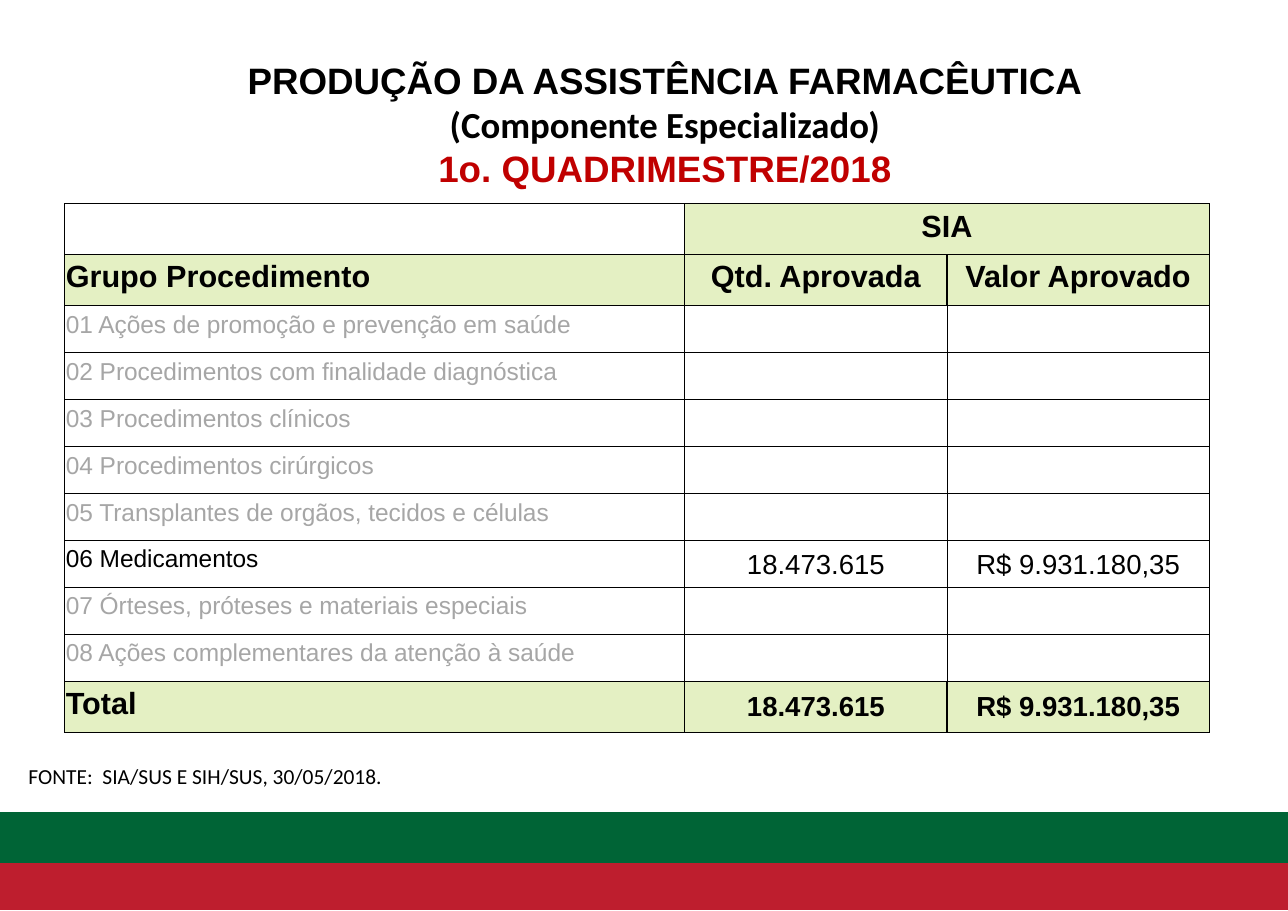
import pptx
import pptx.util
import pptx.dml.color
import pptx.enum.shapes
import pptx.enum.text
import pptx.oxml.ns
import lxml.etree

Pt = pptx.util.Pt
ALIGN = pptx.enum.text.PP_ALIGN
ANCHOR = pptx.enum.text.MSO_ANCHOR

SLIDE_WIDTH, SLIDE_HEIGHT = 841.68, 595.44
COLORS = {"text": "000000", "muted": "A6A6A6", "period": "C00000",
          "header": "E4F0C3", "green": "006436", "red": "BE1E2E"}
THIN, THICK = 0.5, 0.96

HEADINGS = [["", "SIA", ""],
            ["Grupo Procedimento", "Qtd. Aprovada", "Valor Aprovado"]]
GROUPS = ["01 Ações de promoção e prevenção em saúde",
          "02 Procedimentos com finalidade diagnóstica",
          "03 Procedimentos clínicos",
          "04 Procedimentos cirúrgicos",
          "05 Transplantes de orgãos, tecidos e células",
          "06 Medicamentos",
          "07 Órteses, próteses e materiais especiais",
          "08 Ações complementares da atenção à saúde"]
MEDICINES = "06 Medicamentos"
AMOUNTS = ["18.473.615", "R$ 9.931.180,35"]


def rgb(name):
    return pptx.dml.color.RGBColor.from_string(COLORS[name])


def set_margins(target, left, top, right, bottom):
    target.margin_left, target.margin_top = Pt(left), Pt(top)
    target.margin_right, target.margin_bottom = Pt(right), Pt(bottom)


def style_paragraph(paragraph, size, color="text", bold=False, font="Arial", align=ALIGN.LEFT):
    paragraph.alignment = align
    for run in paragraph.runs:
        run.font.name, run.font.size, run.font.bold = font, Pt(size), bold
        run.font.color.rgb = rgb(color)


def add_stripes(slide, left, top, width, height):
    stripe_height = 32.4
    for color, stripe_top in (("red", top + height - stripe_height), ("green", top)):
        stripe = slide.shapes.add_shape(pptx.enum.shapes.MSO_SHAPE.RECTANGLE,
                                        Pt(left), Pt(stripe_top), Pt(width), Pt(stripe_height))
        stripe.shadow.inherit = False
        stripe.fill.solid()
        stripe.fill.fore_color.rgb = rgb(color)
        stripe.line.color.rgb = rgb(color)
        stripe.line.width = Pt(0.75)


def add_heading(slide, left, top, width, height):
    heading = slide.shapes.title
    heading.left, heading.top = Pt(left), Pt(top)
    heading.width, heading.height = Pt(width), Pt(height)
    frame = heading.text_frame
    frame.text = ("PRODUÇÃO DA ASSISTÊNCIA FARMACÊUTICA\n"
                  "(Componente Especializado)\n1o. QUADRIMESTRE/2018")
    frame.word_wrap = True
    frame.auto_size = pptx.enum.text.MSO_AUTO_SIZE.NONE
    frame.vertical_anchor = ANCHOR.MIDDLE
    set_margins(frame, 0, 0, 0, 0)
    looks = [("Arial", "text"), ("Calibri", "text"), ("Arial", "period")]
    for paragraph, (font, color) in zip(frame.paragraphs, looks):
        style_paragraph(paragraph, 24, color, True, font, ALIGN.CENTER)


def set_borders(cell, widths):
    """Draw the left, right, top and bottom borders, in that order."""
    properties = cell._tc.get_or_add_tcPr()
    for position, (side, width) in enumerate(zip("LRTB", widths)):
        line = lxml.etree.Element(pptx.oxml.ns.qn(f"a:ln{side}"), w=str(int(Pt(width))))
        fill = lxml.etree.SubElement(line, pptx.oxml.ns.qn("a:solidFill"))
        lxml.etree.SubElement(fill, pptx.oxml.ns.qn("a:srgbClr"), val=COLORS["text"])
        properties.insert(position, line)


def format_cell(cell, text, row, column, last_row):
    is_heading = row < len(HEADINGS)
    is_total = row == last_row
    shaded = (is_heading or is_total) and (row, column) != (0, 0)

    # Fill and borders
    if shaded:
        cell.fill.solid()
        cell.fill.fore_color.rgb = rgb("header")
        heavy = [True] * 4
    else:
        cell.fill.background()
        heavy = [row > 0 and column == 0, row == 0,
                 row == len(HEADINGS), row in (0, last_row - 1)]
    set_borders(cell, [THICK if side else THIN for side in heavy])

    # Text
    if not text:
        return
    cell.text_frame.text = text
    is_amount = column > 0 and not is_heading
    if is_amount:
        cell.vertical_anchor = ANCHOR.MIDDLE
        set_margins(cell, 0.72, 0.72, 0.72, 0)
    else:
        set_margins(cell, 0.72, 3.6, 0.72, 3.6)
    size = 18 if is_amount else 20 if shaded else 16
    color = "muted" if text in GROUPS and text != MEDICINES else "text"
    align = ALIGN.CENTER if column else ALIGN.LEFT
    style_paragraph(cell.text_frame.paragraphs[0], size, color, shaded, align=align)


def add_production_table(slide, left, top, width, height):
    rows = HEADINGS + [[group] + (AMOUNTS if group == MEDICINES else ["", ""])
                       for group in GROUPS] + [["Total"] + AMOUNTS]
    last_row = len(rows) - 1
    table = slide.shapes.add_table(len(rows), 3, Pt(left), Pt(top), Pt(width), Pt(height)).table
    table.first_row = table.horz_banding = False

    amount_width = 171.4
    for column, column_width in zip(table.columns,
                                    (width - 2 * amount_width, amount_width, amount_width)):
        column.width = Pt(column_width)
    shaded_height = 33.3
    group_height = (height - 3 * shaded_height) / len(GROUPS)
    for index, table_row in enumerate(table.rows):
        table_row.height = Pt(shaded_height if index in (0, 1, last_row) else group_height)

    for row, texts in enumerate(rows):
        for column, text in enumerate(texts):
            format_cell(table.cell(row, column), text, row, column, last_row)
    table.cell(0, 1).merge(table.cell(0, 2))


def add_source_note(slide, left, top, width, height):
    note = slide.shapes.add_textbox(Pt(left), Pt(top), Pt(width), Pt(height)).text_frame
    note.word_wrap = True
    note.text = "FONTE:  SIA/SUS E SIH/SUS, 30/05/2018."
    style_paragraph(note.paragraphs[0], 14, font="Calibri")


def main():
    deck = pptx.Presentation()
    deck.slide_width, deck.slide_height = Pt(SLIDE_WIDTH), Pt(SLIDE_HEIGHT)
    slide = deck.slides.add_slide(deck.slide_layouts[5])
    add_stripes(slide, 0, 531.2, SLIDE_WIDTH, 63.5)
    add_heading(slide, 154.8, 9.4, 559.4, 142.6)
    add_production_table(slide, 42.3, 133.2, 748, 345.6)
    add_source_note(slide, 11.5, 495.4, 328.3, 30.2)
    deck.save("out.pptx")


if __name__ == "__main__":
    main()
